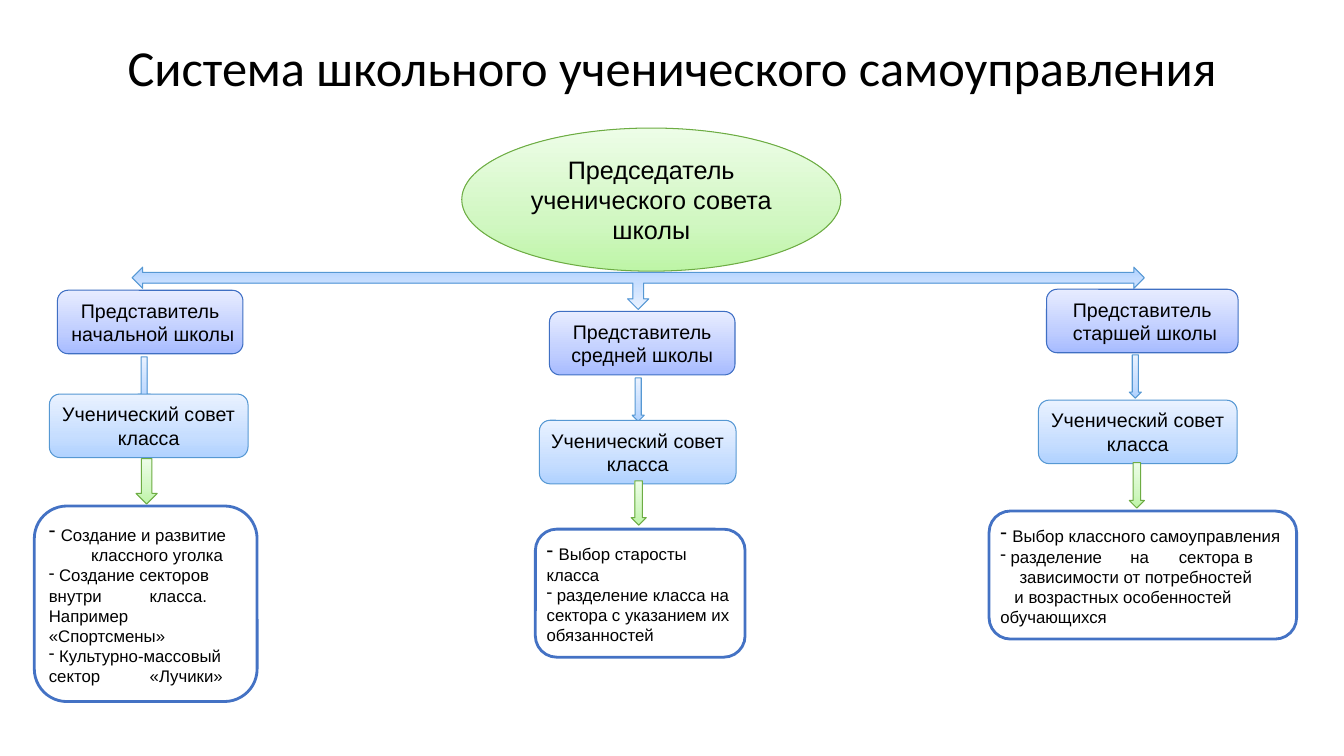
from copy import deepcopy
from dataclasses import dataclass

from lxml.etree import SubElement
from pptx import Presentation
from pptx.dml.color import RGBColor
from pptx.enum.shapes import MSO_SHAPE as Shape
from pptx.enum.text import MSO_ANCHOR as Anchor, PP_ALIGN as Align
from pptx.oxml.ns import qn
from pptx.util import Inches, Pt

GRID = Inches(1)  # one grid cell; all boxes are in cells
COLUMNS, ROWS = 13.33, 7.5


@dataclass(frozen=True)
class Paint:
    line: str
    stops: tuple  # gradient colours from bottom to top
    weight: float = 0.75


@dataclass(frozen=True)
class Theme:
    green: Paint = Paint("6DAC43", ("BEF5A7", "D1F7C2", "EDFDE7"))
    blue: Paint = Paint("5698D3", ("B0D2FF", "C7DEFF", "EAF2FF"))
    violet: Paint = Paint("3F6FC3", ("A6BBFF", "C0CEFF", "E7ECFF"))
    white: Paint = Paint("4472C4", ("FFFFFF",), 2)
    text: str = "000000"
    title_font: str = "Calibri"
    body_font: str = "Arial"
    title_size: int = 36
    head_size: int = 18
    role_size: int = 14
    task_size: int = 12
    inset: float = 0.05


THEME = Theme()
STOP_POSITIONS = (0, 0.35, 1)


@dataclass(frozen=True)
class Box:
    left: float
    top: float
    width: float
    height: float

    def inside(self, left, top, width, height):
        return Box(self.left + left, self.top + top, width, height)

    def place(self):
        return [round(GRID * side) for side in
                (self.left, self.top, self.width, self.height)]


@dataclass(frozen=True)
class Line:
    text: str
    bullet: bool = False
    indent: float = 0
    tabs: tuple = ()


def paint_shape(shape, paint):
    shape.shadow.inherit = False
    shape.line.color.rgb = RGBColor.from_string(paint.line)
    shape.line.width = Pt(paint.weight)
    fill = shape.fill
    if len(paint.stops) == 1:
        fill.solid()
        fill.fore_color.rgb = RGBColor.from_string(paint.stops[0])
        return
    fill.gradient()
    fill.gradient_angle = 90
    stop_list = shape._element.spPr.find(qn("a:gradFill")).find(qn("a:gsLst"))
    stop_list.append(deepcopy(stop_list[0]))
    for stop, position, color in zip(fill.gradient_stops, STOP_POSITIONS, paint.stops):
        stop.position = position
        stop.color.rgb = RGBColor.from_string(color)


def add_part(slide, kind, box, paint, rotation=0):
    shape = slide.shapes.add_shape(kind, *box.place())
    shape.rotation = rotation
    paint_shape(shape, paint)
    return shape


def prepare_frame(frame):
    frame.word_wrap = True
    frame.vertical_anchor = Anchor.MIDDLE
    frame.margin_left = frame.margin_right = Inches(THEME.inset)
    frame.margin_top = frame.margin_bottom = Inches(THEME.inset)


def add_run(paragraph, text, size, font=THEME.body_font):
    run = paragraph.add_run()
    run.text = text
    run.font.name = font
    run.font.size = Pt(size)
    run.font.color.rgb = RGBColor.from_string(THEME.text)


def format_line(paragraph, line):
    properties = paragraph._p.get_or_add_pPr()
    properties.set("marL", str(Inches(line.indent)))
    properties.set("indent", "0")
    if line.bullet:
        SubElement(properties, qn("a:buChar"), char="-")
    else:
        SubElement(properties, qn("a:buNone"))
    if line.tabs:
        tab_list = SubElement(properties, qn("a:tabLst"))
        for position in line.tabs:
            SubElement(tab_list, qn("a:tab"), pos=str(Inches(position)), algn="l")


def write_lines(shape, lines, size, align=Align.CENTER, lead_size=None):
    frame = shape.text_frame
    prepare_frame(frame)
    for index, line in enumerate(lines):
        paragraph = frame.paragraphs[0] if index == 0 else frame.add_paragraph()
        paragraph.alignment = align
        format_line(paragraph, line)
        if line.bullet:  # the first bullet is larger than the rest
            add_run(paragraph, " ", lead_size if index == 0 and lead_size else size)
        add_run(paragraph, line.text, size)


def add_title(slide, box, text):
    title = slide.shapes.title
    title.left, title.top, title.width, title.height = box.place()
    prepare_frame(title.text_frame)
    paragraph = title.text_frame.paragraphs[0]
    paragraph.alignment = Align.CENTER
    paragraph.line_spacing = 0.9
    add_run(paragraph, text, THEME.title_size, THEME.title_font)


def add_chairman(slide, box):
    oval = add_part(slide, Shape.OVAL, box.inside(3.27, 0, 3.76, 1.42), THEME.green)
    write_lines(oval, [Line("Председатель"), Line("ученического совета школы")],
                THEME.head_size)
    # Three-way arrow down to the representatives
    add_part(slide, Shape.LEFT_RIGHT_UP_ARROW,
             box.inside(0, 1.38, box.width, 0.42), THEME.blue, rotation=180)


def add_branch(slide, box, parts, school, tasks):
    role, role_arrow, council, council_arrow, task = (box.inside(*part) for part in parts)
    # Representative
    shape = add_part(slide, Shape.ROUNDED_RECTANGLE, role, THEME.violet)
    write_lines(shape, [Line("Представитель"), Line(school)], THEME.role_size)
    add_part(slide, Shape.DOWN_ARROW, role_arrow, THEME.blue)
    # Tasks
    shape = add_part(slide, Shape.ROUNDED_RECTANGLE, task, THEME.white)
    write_lines(shape, tasks, THEME.task_size, Align.LEFT, THEME.role_size)
    # Class council
    shape = add_part(slide, Shape.ROUNDED_RECTANGLE, council, THEME.blue)
    write_lines(shape, [Line("Ученический совет класса")], THEME.role_size)
    add_part(slide, Shape.DOWN_ARROW, council_arrow, THEME.green)


# Each branch: its box, its parts from top to bottom, the school, the tasks
BRANCHES = [
    (Box(0.34, 2.88, 2.21, 4.08),
     [(0.23, 0, 1.84, 0.63), (1.03, 0.66, 0.12, 0.43), (0.15, 1.03, 1.97, 0.63),
      (1.01, 1.67, 0.21, 0.45), (0, 2.14, 2.21, 1.94)],
     " начальной школы",
     [Line("Создание и развитие", bullet=True), Line("классного уголка", indent=0.42),
      Line("Создание секторов", bullet=True), Line("внутри\tкласса.", tabs=(0.66,)),
      Line("Например"), Line("«Спортсмены»"),
      Line("Культурно-массовый", bullet=True), Line("сектор\t«Лучики»", tabs=(0.87,))]),
    (Box(5.31, 3.09, 2.08, 3.43),
     [(0.14, 0, 1.84, 0.63), (0.96, 0.66, 0.12, 0.43), (0.04, 1.08, 1.95, 0.63),
      (0.95, 1.68, 0.15, 0.44), (0, 2.16, 2.08, 1.27)],
     "средней школы",
     [Line("Выбор старосты", bullet=True), Line("класса"),
      Line("разделение класса на сектора с указанием их обязанностей", bullet=True)]),
    (Box(9.81, 2.87, 3.05, 3.47),
     [(0.57, 0, 1.9, 0.63), (1.39, 0.65, 0.12, 0.43), (0.49, 1.1, 1.97, 0.63),
      (1.39, 1.72, 0.15, 0.45), (0, 2.2, 3.05, 1.27)],
     " старшей школы",
     [Line("Выбор классного самоуправления", bullet=True),
      Line("разделение\tна\tсектора в", bullet=True, tabs=(1.29, 1.77)),
      Line("зависимости от потребностей", indent=0.19),
      Line("и возрастных особенностей", indent=0.14), Line("обучающихся")]),
]


def main():
    presentation = Presentation()
    presentation.slide_width = round(GRID * COLUMNS)
    presentation.slide_height = round(GRID * ROWS)
    slide = presentation.slides.add_slide(presentation.slide_layouts[5])
    add_title(slide, Box(0.92, 0.33, 11.5, 0.74),
              "Система школьного ученического самоуправления")
    add_chairman(slide, Box(1.31, 1.27, 10.04, 1.8))
    for box, parts, school, tasks in BRANCHES:
        add_branch(slide, box, parts, school, tasks)
    presentation.save("out.pptx")


if __name__ == "__main__":
    main()
